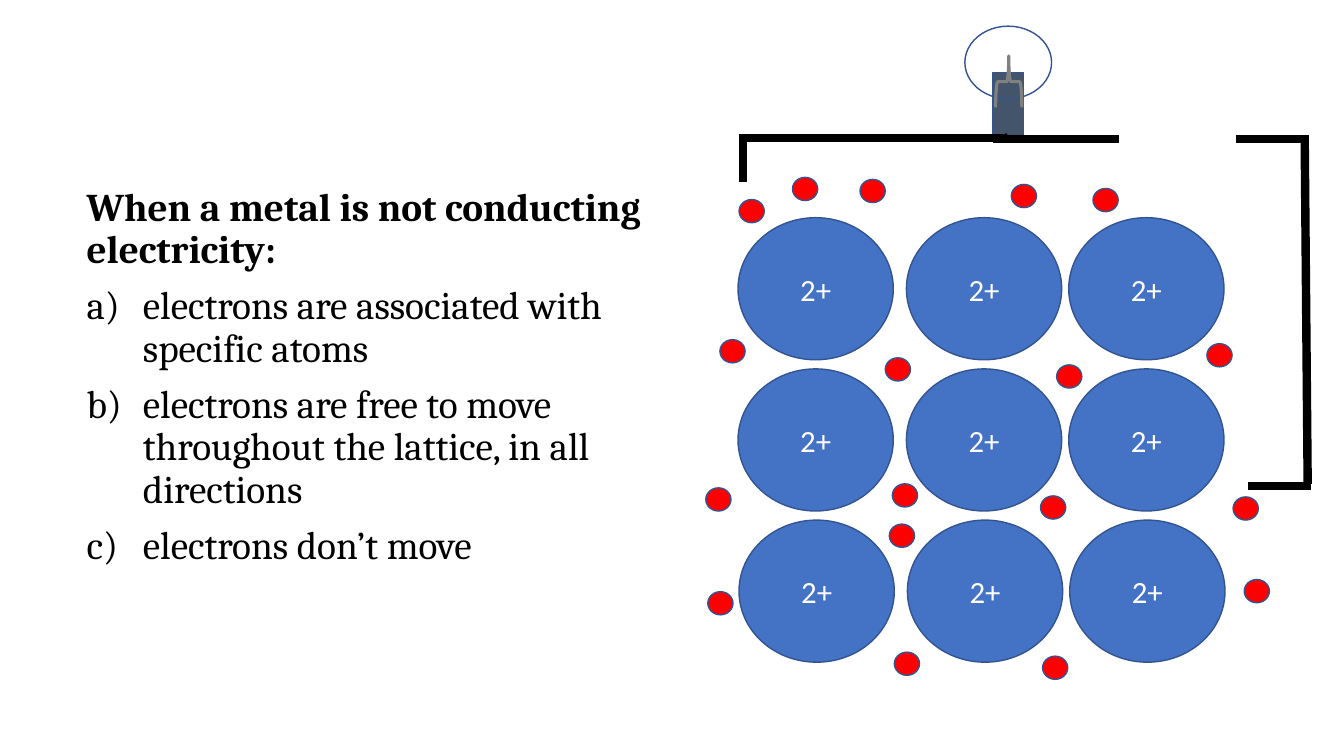
from dataclasses import dataclass

from lxml import etree
from pptx import Presentation
from pptx.dml.color import RGBColor
from pptx.enum.shapes import MSO_CONNECTOR, MSO_SHAPE
from pptx.enum.text import MSO_ANCHOR, PP_ALIGN
from pptx.oxml.ns import qn
from pptx.util import Pt

OVAL = MSO_SHAPE.OVAL
RECTANGLE = MSO_SHAPE.RECTANGLE
RIGHT_BRACE = MSO_SHAPE.RIGHT_BRACE
STRAIGHT = MSO_CONNECTOR.STRAIGHT
MIDDLE = MSO_ANCHOR.MIDDLE
CENTER = PP_ALIGN.CENTER
LEFT = PP_ALIGN.LEFT
BOTTOM_SITE = 2
EMU_PER_PX = 9144  # 100 px to the inch


@dataclass(frozen=True)
class Theme:
    ion: str = "4472C4"
    electron: str = "FF0000"
    outline: str = "325491"
    bulb_base: str = "44546A"
    filament: str = "808080"
    wire: str = "000000"
    text: str = "000000"
    ion_text: str = "FFFFFF"
    body_font: str = "Cambria"
    ion_font: str = "Calibri"
    body_size: int = 28
    ion_size: int = 22
    outline_width: float = 1
    filament_width: float = 2.25
    wire_width: float = 6


THEME = Theme()

QUESTION = "When a metal is not conducting electricity:"
ANSWERS = [
    "electrons are associated with specific atoms",
    "electrons are free to move throughout the lattice, in all directions",
    "electrons don’t move",
]

ION_COLUMNS = (732, 899, 1060)
ION_TOP, ION_PITCH = 216, 150
ION_SIZE = (154, 141)
ELECTRON_SIZE = (25, 23)
ELECTRONS = [
    (853, 178), (1234, 575), (878, 355), (1003, 183), (1048, 362), (733, 198),
    (700, 484), (1032, 492), (885, 480), (1084, 187), (1197, 341), (714, 337),
    (702, 587), (887, 647), (1034, 651), (786, 176), (882, 520), (1223, 493),
]
LAMP_WIRE = (1000, 136, 995, 138)
WIRES = [
    (995, 137, 733, 137), (737, 138, 737, 181), (1297, 480, 1294, 134),
    (1300, 482, 1238, 482), (1110, 138, 985, 138), (1294, 138, 1226, 138),
]


def px(*lengths):
    return [length * EMU_PER_PX for length in lengths]


def rgb(color):
    return RGBColor.from_string(color)


def write_text(paragraph, text, *, font, size, color, bold=False, align=LEFT):
    paragraph.alignment = align
    run = paragraph.add_run()
    run.text = text
    run.font.name = font
    run.font.size = Pt(size)
    run.font.bold = bold
    run.font.color.rgb = rgb(color)


def add_letter(paragraph, indent):
    """Number the paragraph a), b), c) with a hanging indent."""
    properties = paragraph._p.get_or_add_pPr()
    properties.set("marL", str(indent))
    properties.set("indent", str(-indent))
    etree.SubElement(properties, qn("a:buFont"), typeface="+mj-lt")
    etree.SubElement(properties, qn("a:buAutoNum"), type="alphaLcParenR")


def add_outlined(slide, kind, box, *, fill=None, line=THEME.outline,
                 width=THEME.outline_width):
    shape = slide.shapes.add_shape(kind, *px(*box))
    shape.shadow.inherit = False
    if fill:
        shape.fill.solid()
        shape.fill.fore_color.rgb = rgb(fill)
    else:
        shape.fill.background()
    shape.line.color.rgb = rgb(line)
    shape.line.width = Pt(width)
    return shape


def add_ion(slide, left, top):
    ion = add_outlined(slide, OVAL, (left, top, *ION_SIZE), fill=THEME.ion)
    ion.text_frame.vertical_anchor = MIDDLE
    write_text(ion.text_frame.paragraphs[0], "2+", font=THEME.ion_font,
               size=THEME.ion_size, color=THEME.ion_text, align=CENTER)


def add_lattice(slide):
    for row in range(3):
        shift = row // 2  # the bottom row sits slightly to the right
        for left in ION_COLUMNS:
            add_ion(slide, left + shift, ION_TOP + row * ION_PITCH)


def add_electrons(slide):
    for position in ELECTRONS:
        add_outlined(slide, OVAL, (*position, *ELECTRON_SIZE),
                     fill=THEME.electron)


def add_wire(slide, ends):
    wire = slide.shapes.add_connector(STRAIGHT, *px(*ends))
    wire.line.color.rgb = rgb(THEME.wire)
    wire.line.width = Pt(THEME.wire_width)
    etree.SubElement(wire._element.spPr, qn("a:effectLst"))
    return wire


def add_circuit(slide):
    base = add_outlined(slide, RECTANGLE, (985, 72, 30, 64),
                        fill=THEME.bulb_base)
    add_outlined(slide, OVAL, (957, 26, 86, 72))
    add_wire(slide, LAMP_WIRE).begin_connect(base, BOTTOM_SITE)
    for ends in WIRES:
        add_wire(slide, ends)
    filament = add_outlined(slide, RIGHT_BRACE, (975, 68, 51, 26),
                            line=THEME.filament, width=THEME.filament_width)
    filament.rotation = 270


def add_question(slide):
    frame = slide.shapes.add_textbox(*px(76, 181, 589, 476)).text_frame
    frame.word_wrap = True
    for index, text in enumerate([QUESTION, *ANSWERS]):
        paragraph = frame.add_paragraph() if index else frame.paragraphs[0]
        paragraph.line_spacing = 0.9
        paragraph.space_before = Pt(10)
        write_text(paragraph, text, font=THEME.body_font, size=THEME.body_size,
                   color=THEME.text, bold=index == 0)
        if index:
            add_letter(paragraph, *px(56))


def main():
    presentation = Presentation()
    presentation.slide_width, presentation.slide_height = px(1333, 750)
    slide = presentation.slides.add_slide(presentation.slide_layouts[6])
    add_question(slide)
    add_lattice(slide)
    add_electrons(slide)
    add_circuit(slide)
    presentation.save("out.pptx")


if __name__ == "__main__":
    main()
